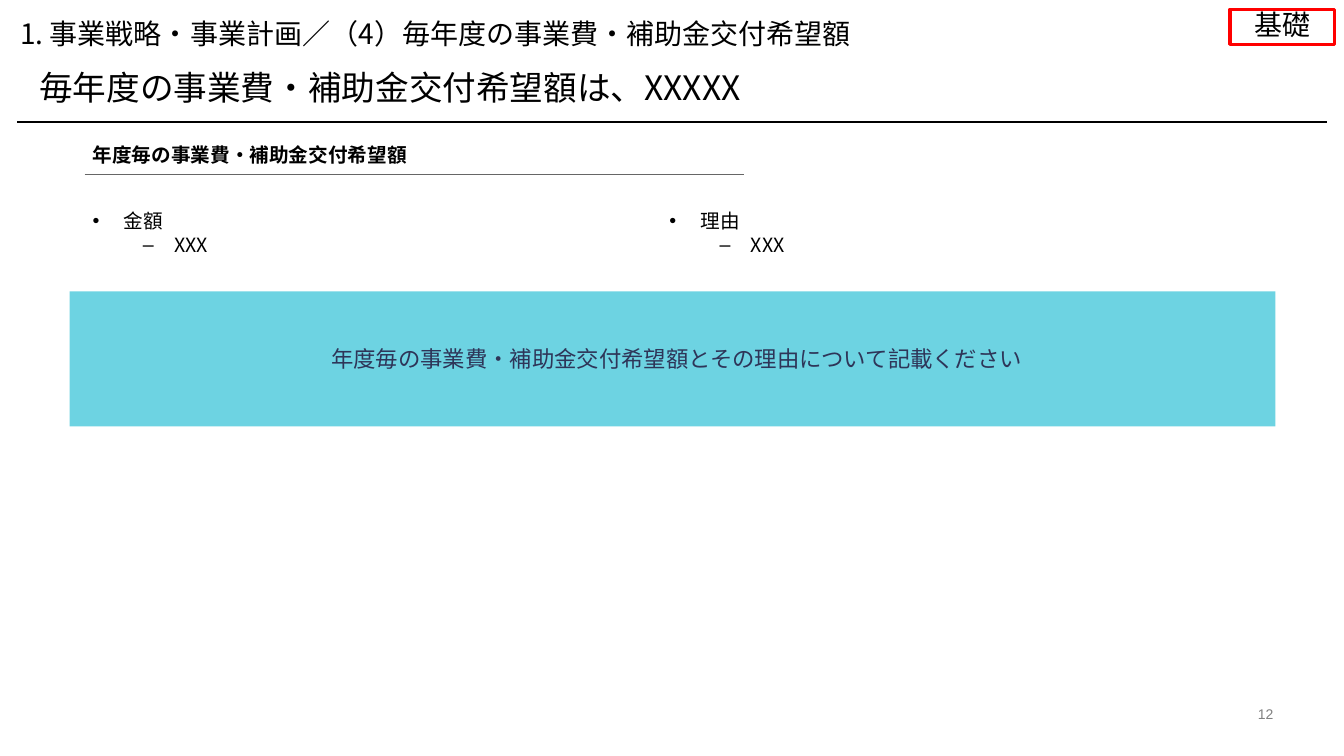
"""Build the slide on yearly project costs and requested subsidies."""
from lxml import etree
from pptx import Presentation
from pptx.dml.color import RGBColor
from pptx.enum.shapes import MSO_CONNECTOR, MSO_SHAPE
from pptx.enum.text import MSO_ANCHOR, MSO_AUTO_SIZE, PP_ALIGN
from pptx.oxml.ns import qn
from pptx.util import Inches, Pt

LEFT, CENTER, RIGHT = PP_ALIGN.LEFT, PP_ALIGN.CENTER, PP_ALIGN.RIGHT
TOP, MIDDLE, BOTTOM = MSO_ANCHOR.TOP, MSO_ANCHOR.MIDDLE, MSO_ANCHOR.BOTTOM
RECTANGLE, STRAIGHT = MSO_SHAPE.RECTANGLE, MSO_CONNECTOR.STRAIGHT
NO_AUTOFIT = MSO_AUTO_SIZE.NONE
JAPANESE = "Noto Sans CJK JP"
BULLETS = (("•", 0.31), ("‒", 0.81))

rgb = RGBColor.from_string


def write(shape, lines, size, color="000000", font=JAPANESE, bold=False, align=LEFT,
          anchor=MIDDLE, inset=True, spacing=1.0, bulleted=False):
    """Fill a shape with formatted paragraphs, one outline level per line if bulleted."""
    frame = shape.text_frame
    frame_format = {"word_wrap": True, "auto_size": NO_AUTOFIT, "vertical_anchor": anchor}
    if not inset:
        frame_format |= {f"margin_{side}": 0 for side in ("left", "top", "right", "bottom")}
    for name, value in frame_format.items():
        setattr(frame, name, value)
    for level, line in enumerate(lines):
        paragraph = frame.paragraphs[0] if level == 0 else frame.add_paragraph()
        paragraph.alignment = align
        paragraph.line_spacing = spacing
        if bulleted:
            paragraph.level = level
            symbol, indent = BULLETS[level]
            properties = paragraph._p.get_or_add_pPr()
            properties.set("marL", str(Inches(indent)))
            properties.set("indent", str(-Inches(0.31)))
            etree.SubElement(properties, qn("a:buFont"), typeface="Arial")
            etree.SubElement(properties, qn("a:buChar"), char=symbol)
        run = paragraph.add_run()
        run.text = line
        for name, value in {"size": Pt(size), "bold": bold, "name": font}.items():
            setattr(run.font, name, value)
        run.font.color.rgb = rgb(color)
        etree.SubElement(run._r.get_or_add_rPr(), qn("a:ea"), typeface=font)


def add_rule(left, right, top, color, width):
    """Draw a horizontal rule without a shadow."""
    rule = slide.shapes.add_connector(
        STRAIGHT, Inches(left), Inches(top), Inches(right), Inches(top))
    rule.line.color.rgb = rgb(color)
    rule.line.width = Pt(width)
    etree.SubElement(rule._element.spPr, qn("a:effectLst"))


presentation = Presentation()
presentation.slide_width = Inches(13.33)
presentation.slide_height = Inches(7.5)
slide = presentation.slides.add_slide(presentation.slide_layouts[5])

title = slide.shapes.title
title_place = {"left": 0.39, "top": 0.71, "width": 12.3, "height": 0.36}
for name, value in title_place.items():
    setattr(title, name, Inches(value))
write(title, ["毎年度の事業費・補助金交付希望額は、XXXXX"], 24,
      anchor=TOP, inset=False, spacing=0.9)

text_boxes = [
    ((12.21, 7, 0.42, 0.17), ["12"],
     {"size": 10, "font": "Arial", "color": "808080", "align": RIGHT,
      "anchor": BOTTOM, "inset": False}),
    ((0.2, 0.2, 11.96, 0.3), ["1. 事業戦略・事業計画／（4）毎年度の事業費・補助金交付希望額"],
     {"size": 20, "anchor": TOP, "inset": False, "spacing": 0.9}),
    ((0.82, 1.34, 6.54, 0.39), ["年度毎の事業費・補助金交付希望額"], {"size": 14, "bold": True}),
    ((0.82, 2.12, 6.04, 0.38), ["金額", "XXX"], {"size": 14, "bulleted": True}),
    ((6.54, 2.12, 6.04, 0.38), ["理由", "XXX"], {"size": 14, "bulleted": True}),
]
for place, lines, text_format in text_boxes:
    write(slide.shapes.add_textbox(*map(Inches, place)), lines, **text_format)

add_rule(0.17, 13.16, 1.21, "000000", 1)
add_rule(0.84, 7.38, 1.73, "666666", 0.75)

category_tag = slide.shapes.add_shape(RECTANGLE, *map(Inches, (12.2, 0.09, 1.04, 0.35)))
category_tag.shadow.inherit = False
category_tag.fill.background()
category_tag.line.color.rgb = rgb("FF0000")
category_tag.line.width = Pt(2.25)
write(category_tag, ["基礎"], 20, align=CENTER, inset=False, spacing=0.9)

guidance = slide.shapes.add_shape(RECTANGLE, *map(Inches, (0.69, 2.89, 11.96, 1.34)))
guidance.shadow.inherit = False
guidance.fill.solid()
guidance.fill.fore_color.rgb = rgb("30C1D7")
fill_color = guidance._element.spPr.find(qn("a:solidFill")).find(qn("a:srgbClr"))
etree.SubElement(fill_color, qn("a:alpha"), val="70000")
guidance.line.fill.background()
write(guidance, ["年度毎の事業費・補助金交付希望額とその理由について記載ください"], 16,
      color="2E3558", align=CENTER)
guidance.text_frame.paragraphs[0]._p.get_or_add_pPr().set("marL", str(Inches(0.09)))

presentation.save("out.pptx")
